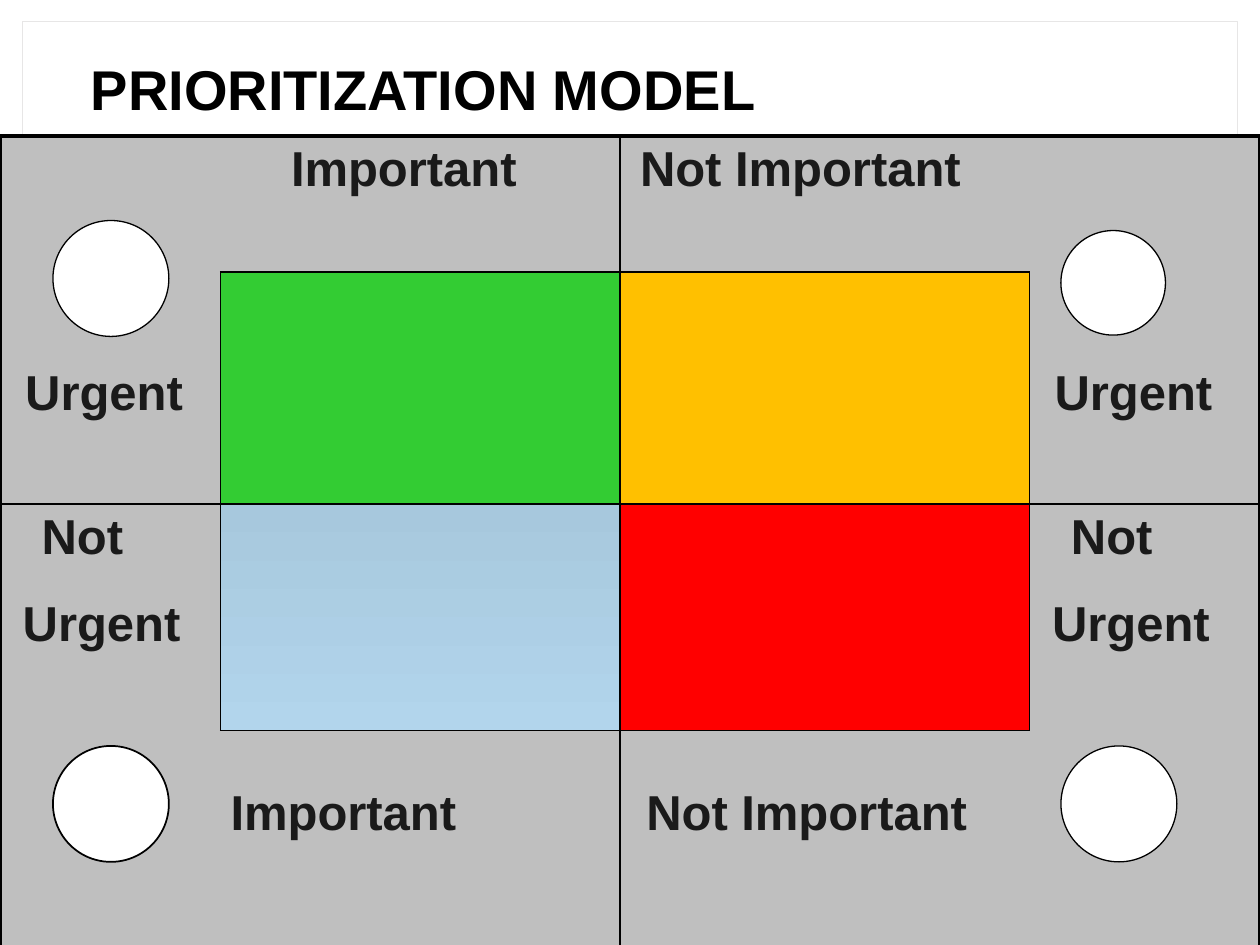
from dataclasses import dataclass
from itertools import accumulate, product

from lxml.etree import SubElement
from pptx import Presentation
from pptx.dml.color import RGBColor
from pptx.enum.shapes import MSO_SHAPE as Shape
from pptx.enum.text import MSO_ANCHOR as Anchor, PP_ALIGN as Align
from pptx.oxml.ns import qn
from pptx.util import Inches, Pt


@dataclass(frozen=True)
class Theme:
    """Colours, type sizes and line widths of the slide."""
    font: str = "Arial"
    black: str = "000000"
    ink: str = "1A1A1A"
    white: str = "FFFFFF"
    panel: str = "BFBFBF"
    frame: str = "E7E6E6"
    title_size: float = 32
    label_size: float = 28
    paragraph_gap: float = 18.2
    outer_line: float = 2.25
    inner_line: float = 1


THEME = Theme()
WIDTH, HEIGHT = 10, 7.5
COLUMNS = (1.75, 3.17, 3.25, 1.83)
ROWS = (1.08, 1.84, 1.8, 1.78)
QUADRANTS = {
    (1, 1): ("33CC33",),
    (1, 2): ("FFC000",),
    (2, 1): ("A7C8DD", "B2D5EC"),
    (2, 2): ("FF0000",),
}
URGENT = (0.75, [("Urgent", 0.12)])
NOT_URGENT = (0.05, [("Not", 0.25), ("Urgent", 0.1)])
LABELS = {
    (0, 1): (0.05, [("Important", 0.48)]),
    (0, 2): (0.05, [("Not Important", 0.08)]),
    (1, 0): URGENT,
    (1, 3): URGENT,
    (2, 0): NOT_URGENT,
    (2, 3): NOT_URGENT,
    (3, 1): (0.44, [("Important", 0)]),
    (3, 2): (0.44, [("Not Important", 0.13)]),
}
CIRCLES = (
    (0, 0.42, 0.67, 0.92, 0.75),
    (3, 0.25, 0.75, 0.83, 0.75),
    (3, 0.25, 4.84, 0.92, 0.75),
    (0, 0.42, 4.84, 0.92, 1),
)


def color(value):
    """Turn a hex value into a colour."""
    return RGBColor.from_string(value)


def write(paragraph, text, size, ink=THEME.ink, indent=0, gap=0):
    """Fill a paragraph with one bold line of text."""
    paragraph.alignment = Align.LEFT
    if indent:
        paragraph._p.get_or_add_pPr().set("marL", str(Inches(indent)))
    if gap:
        paragraph.space_before = Pt(gap)
    run = paragraph.add_run()
    run.text = text
    run.font.name, run.font.size, run.font.bold = THEME.font, Pt(size), True
    run.font.color.rgb = color(ink)


def add_outline(slide, kind, box, line, width, fill=None):
    """Add a preset shape with a thin line and an optional fill."""
    shape = slide.shapes.add_shape(kind, *map(Inches, box))
    shape.shadow.inherit = False
    if fill:
        shape.fill.solid()
        shape.fill.fore_color.rgb = color(fill)
    else:
        shape.fill.background()
    shape.line.color.rgb = color(line)
    shape.line.width = Pt(width)


def add_title(slide, text, box):
    """Place and format the title placeholder."""
    title = slide.shapes.title
    title.left, title.top, title.width, title.height = map(Inches, box)
    frame = title.text_frame
    frame.vertical_anchor = Anchor.TOP
    frame.word_wrap = True
    paragraph = frame.paragraphs[0]
    paragraph.line_spacing = 0.9
    write(paragraph, text, THEME.title_size, THEME.black)


def edge_width(boundary, lane, count=4):
    """Give the line width where a grid boundary crosses a lane."""
    if boundary in (0, count):
        return THEME.outer_line
    return THEME.inner_line if boundary == 2 or lane in (1, 2) else 0


def set_borders(cell, row, column):
    """Draw the four borders of a cell by its place in the grid."""
    widths = {
        "a:lnL": edge_width(column, row),
        "a:lnR": edge_width(column + 1, row),
        "a:lnT": edge_width(row, column),
        "a:lnB": edge_width(row + 1, column),
    }
    properties = cell._tc.get_or_add_tcPr()
    for tag, width in widths.items():
        line = SubElement(properties, qn(tag), w=str(Pt(width)))
        if width:
            fill = SubElement(line, qn("a:solidFill"))
            SubElement(fill, qn("a:srgbClr"), val=THEME.black)
        else:
            SubElement(line, qn("a:noFill"))


def fill_cell(cell, colors):
    """Fill a cell with one colour or a downward gradient of two."""
    if len(colors) == 1:
        cell.fill.solid()
        cell.fill.fore_color.rgb = color(colors[0])
        return
    cell.fill.gradient()
    cell.fill.gradient_angle = 270
    for stop, value, position in zip(cell.fill.gradient_stops, colors, (0, 1)):
        stop.color.rgb = color(value)
        stop.position = position


def label_cell(cell, top, lines):
    """Write the label lines of a cell below a top margin."""
    cell.margin_left, cell.margin_right = Inches(0.08), 0
    cell.margin_top = Inches(top)
    frame = cell.text_frame
    for index, (text, indent) in enumerate(lines):
        paragraph = frame.add_paragraph() if index else frame.paragraphs[0]
        write(paragraph, text, THEME.label_size, indent=indent,
              gap=THEME.paragraph_gap if index else 0)


def add_matrix(slide, left, top):
    """Build the priority table with its corner circles."""
    box = map(Inches, (left, top, sum(COLUMNS), sum(ROWS)))
    table = slide.shapes.add_table(len(ROWS), len(COLUMNS), *box).table
    table.first_row = table.horz_banding = False
    for column, width in zip(table.columns, COLUMNS):
        column.width = Inches(width)
    for row, height in zip(table.rows, ROWS):
        row.height = Inches(height)
    for place in product(range(len(ROWS)), range(len(COLUMNS))):
        cell = table.cell(*place)
        set_borders(cell, *place)
        fill_cell(cell, QUADRANTS.get(place, (THEME.panel,)))
        if place in LABELS:
            label_cell(cell, *LABELS[place])
    column_starts = list(accumulate(COLUMNS, initial=left))
    for column, inset, drop, size, width in CIRCLES:
        circle = (column_starts[column] + inset, top + drop, size, size)
        add_outline(slide, Shape.OVAL, circle, THEME.black, width, THEME.white)


def main():
    """Build and save the slide."""
    presentation = Presentation()
    presentation.slide_width, presentation.slide_height = Inches(WIDTH), Inches(HEIGHT)
    slide = presentation.slides.add_slide(presentation.slide_layouts[5])
    add_outline(slide, Shape.RECTANGLE, (0.18, 0.17, 9.64, 7.16), THEME.frame, 0.5)
    add_title(slide, "PRIORITIZATION MODEL", (0.62, 0.44, 8.75, 0.65))
    add_matrix(slide, 0, 1.08)
    presentation.save("out.pptx")


if __name__ == "__main__":
    main()
